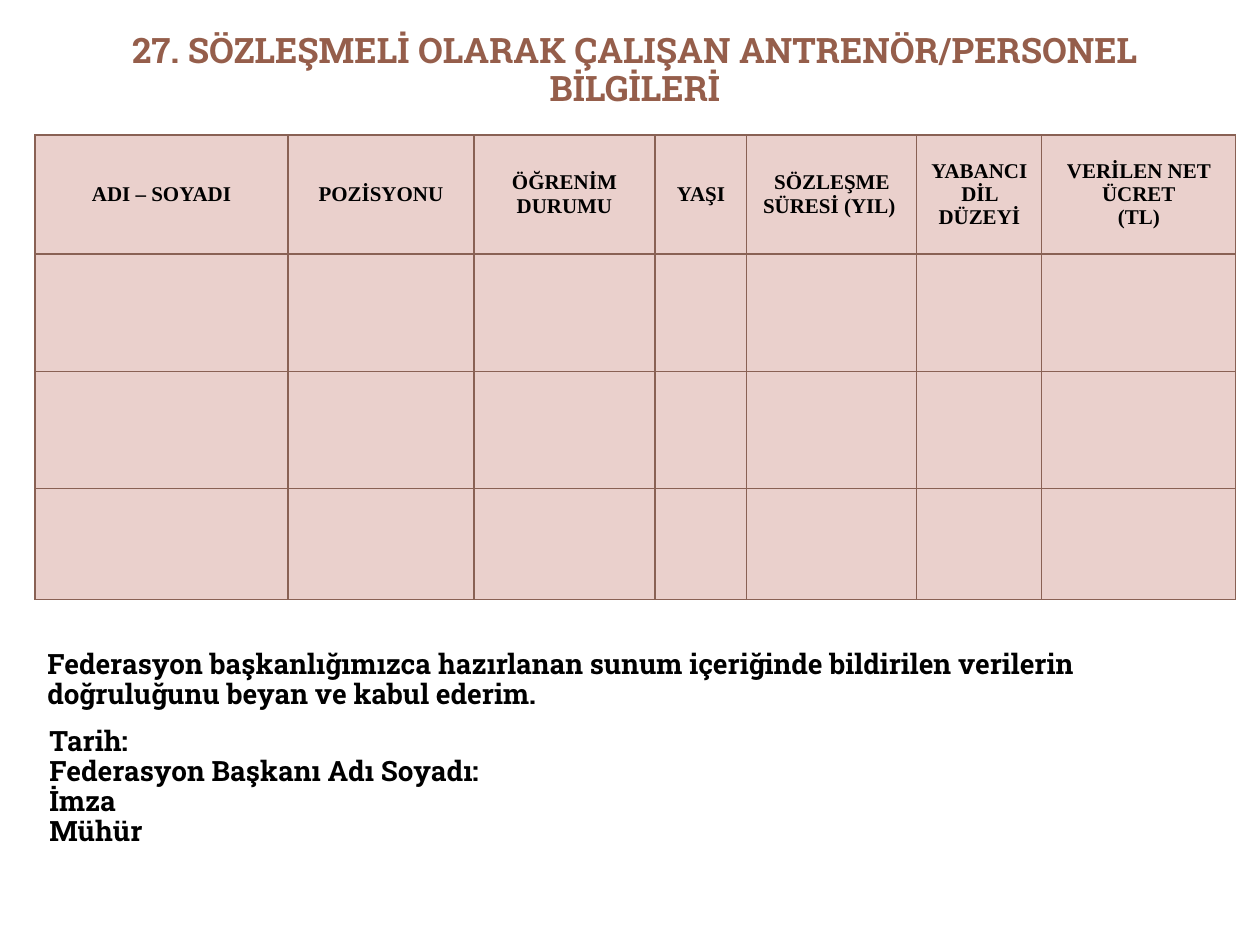
from lxml import etree
from pptx import Presentation
from pptx import util as u
from pptx.dml.color import RGBColor
from pptx.enum import text
from pptx.oxml.ns import qn

EMU_PER_PX = 914400 / 126
BROWN, BORDER, PINK, BLACK = "955E4B", "896154", "EAD0CC", "000000"
HEADING_FONT, TABLE_FONT = "Roboto Slab", "Times New Roman"

HEADERS = ["ADI – SOYADI", "POZİSYONU", "ÖĞRENİM DURUMU", "YAŞI",
           "SÖZLEŞME SÜRESİ (YIL) ", "YABANCI DİL DÜZEYİ",
           "VERİLEN NET ÜCRET\n(TL)"]
COLUMN_WIDTHS = [253, 186, 181, 92, 170, 125, 194]
ROW_HEIGHTS = [119, 118, 117, 111]


def px(length):
    return u.Emu(round(length * EMU_PER_PX))


def color(value):
    return RGBColor.from_string(value)


class SlideBuilder:
    def __init__(self, page):
        self.page = page

    def style(self, frame, font, size, ink, align, spacing=None):
        for para in frame.paragraphs:
            para.alignment = align
            if spacing:
                para.line_spacing = spacing
            for span in para.runs:
                span.font.name = font
                span.font.size = u.Pt(size)
                span.font.bold = True
                span.font.color.rgb = color(ink)

    def text_box(self, area, words, size, ink=BLACK, align=text.PP_ALIGN.LEFT):
        box = self.page.shapes.add_textbox(*map(px, area))
        frame = box.text_frame
        frame.word_wrap = True
        frame.vertical_anchor = text.MSO_ANCHOR.TOP
        frame.text = words
        self.style(frame, HEADING_FONT, size, ink, align, 0.9)

    def border(self, cell):
        """Outline all four sides; the lines must precede the cell fill."""
        properties = cell._tc.get_or_add_tcPr()
        for position, side in enumerate(("lnL", "lnR", "lnT", "lnB")):
            line = etree.Element(qn("a:" + side), w=str(u.Pt(0.75)))
            fill = etree.SubElement(line, qn("a:solidFill"))
            etree.SubElement(fill, qn("a:srgbClr"), val=BORDER)
            properties.insert(position, line)

    def table(self, left, top, widths, heights, headers):
        area = (left, top, sum(widths), sum(heights))
        grid = self.page.shapes.add_table(
            len(heights), len(widths), *map(px, area)).table
        for column, width in zip(grid.columns, widths):
            column.width = px(width)
        for row, height in zip(grid.rows, heights):
            row.height = px(height)
        for cell, header in zip(grid.rows[0].cells, headers):
            cell.text_frame.text = header
            self.style(cell.text_frame, TABLE_FONT, 12, BLACK,
                       text.PP_ALIGN.CENTER)
        for cell in grid.iter_cells():
            cell.vertical_anchor = text.MSO_ANCHOR.MIDDLE
            cell.fill.solid()
            cell.fill.fore_color.rgb = color(PINK)
            self.border(cell)


def main():
    deck = Presentation()
    deck.slide_width, deck.slide_height = px(1260), px(945)
    builder = SlideBuilder(deck.slides.add_slide(deck.slide_layouts[6]))

    builder.text_box((64, 27, 1142, 149),
                     "27. SÖZLEŞMELİ OLARAK ÇALIŞAN ANTRENÖR/PERSONEL BİLGİLERİ",
                     20, BROWN, text.PP_ALIGN.CENTER)
    builder.table(35, 135, COLUMN_WIDTHS, ROW_HEIGHTS, HEADERS)
    builder.text_box((35, 644, 1172, 71),
                     "Federasyon başkanlığımızca hazırlanan sunum içeriğinde "
                     "bildirilen verilerin doğruluğunu beyan ve kabul ederim.", 16)
    builder.text_box((37, 721, 714, 57),
                     "Tarih:\nFederasyon Başkanı Adı Soyadı:\nİmza\nMühür", 16)
    deck.save("out.pptx")


if __name__ == "__main__":
    main()
